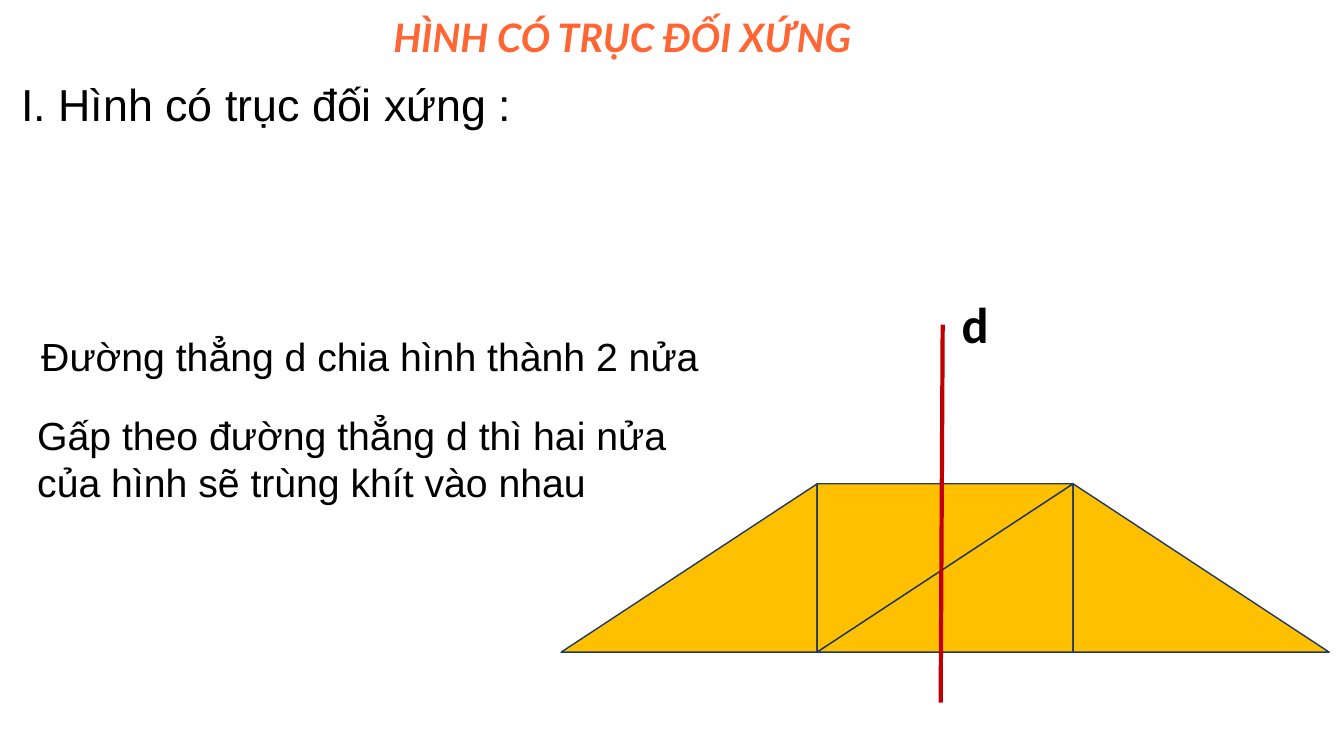
from dataclasses import dataclass

from pptx import Presentation
from pptx.dml.color import RGBColor
from pptx.enum.shapes import MSO_CONNECTOR, MSO_SHAPE
from pptx.enum.text import PP_ALIGN
from pptx.oxml.ns import qn
from pptx.util import Inches, Pt
from lxml import etree

STRAIGHT = MSO_CONNECTOR.STRAIGHT
RIGHT_TRIANGLE = MSO_SHAPE.RIGHT_TRIANGLE
LEFT, CENTER = PP_ALIGN.LEFT, PP_ALIGN.CENTER
WIDTH, HEIGHT = Inches(13.33), Inches(7.5)


@dataclass(frozen=True)
class Theme:
    title: RGBColor = RGBColor(0xFF, 0x66, 0x33)
    ink: RGBColor = RGBColor(0, 0, 0)
    triangle: RGBColor = RGBColor(0xFF, 0xC0, 0x00)
    outline: RGBColor = RGBColor(0x20, 0x38, 0x64)
    axis: RGBColor = RGBColor(0xC0, 0x00, 0x00)
    body_font: str = "Arial"
    title_font: str = "Lato"
    label_font: str = "Calibri"
    body_size: int = 28
    heading_size: int = 32
    label_size: int = 36
    outline_width: int = 1
    axis_width: int = 3


THEME = Theme()


def across(percent):
    return round(WIDTH * percent / 100)


def down(percent):
    return round(HEIGHT * percent / 100)


def add_text(slide, box, text, size=THEME.body_size, name=THEME.body_font,
             color=THEME.ink, bold=False, italic=False, align=LEFT):
    x, y, w, h = box
    tb = slide.shapes.add_textbox(across(x), down(y), across(w), down(h))
    tf = tb.text_frame
    tf.word_wrap = True
    p = tf.paragraphs[0]
    p.text = text
    p.alignment = align
    p.font.size = Pt(size)
    p.font.name = name
    p.font.color.rgb = color
    p.font.bold = bold
    p.font.italic = italic


def add_triangle(slide, left, top, w, h, rotation):
    sw, sh = (h, w) if rotation % 180 else (w, h)
    sp = slide.shapes.add_shape(
        RIGHT_TRIANGLE, left + (w - sw) // 2, top + (h - sh) // 2, sw, sh)
    sp.rotation = rotation
    sp.shadow.inherit = False
    sp.fill.solid()
    sp.fill.fore_color.rgb = THEME.triangle
    sp.line.color.rgb = THEME.outline
    sp.line.width = Pt(THEME.outline_width)


def add_trapezoid(slide, x, y, column, row):
    for step, rotation in ((0, 270), (1, 90), (1, 270), (2, 0)):
        add_triangle(slide, across(x + step * column), down(y),
                     across(column), down(row), rotation)


def add_axis(slide, x1, y1, x2, y2):
    line = slide.shapes.add_connector(
        STRAIGHT, across(x1), down(y1), across(x2), down(y2))
    line.line.color.rgb = THEME.axis
    line.line.width = Pt(THEME.axis_width)
    etree.SubElement(line.element.spPr, qn("a:effectLst"))


def main():
    prs = Presentation()
    prs.slide_width, prs.slide_height = WIDTH, HEIGHT
    slide = prs.slides.add_slide(prs.slide_layouts[6])

    add_trapezoid(slide, 41.75, 64, 19.05, 22.27)
    add_text(slide, (2.33, 43.33, 51.54, 7.6),
             "Đường thẳng d chia hình thành 2 nửa")
    add_text(slide, (2.03, 53.73, 51.24, 13.87),
             "Gấp theo đường thẳng d thì hai nửa của hình sẽ trùng khít vào nhau")
    add_text(slide, (70.82, 38.13, 4.35, 9.47), "d", THEME.label_size,
             THEME.label_font, bold=True)
    add_axis(slide, 70.14, 42.93, 69.99, 92.93)
    add_text(slide, (10.25, 1.07, 72.09, 7.73), "HÌNH CÓ TRỤC ĐỐI XỨNG",
             name=THEME.title_font, color=THEME.title, bold=True,
             italic=True, align=CENTER)
    add_text(slide, (0.83, 9.47, 40.59, 8.53), "I. Hình có trục đối xứng :",
             THEME.heading_size)

    prs.save("out.pptx")


if __name__ == "__main__":
    main()
